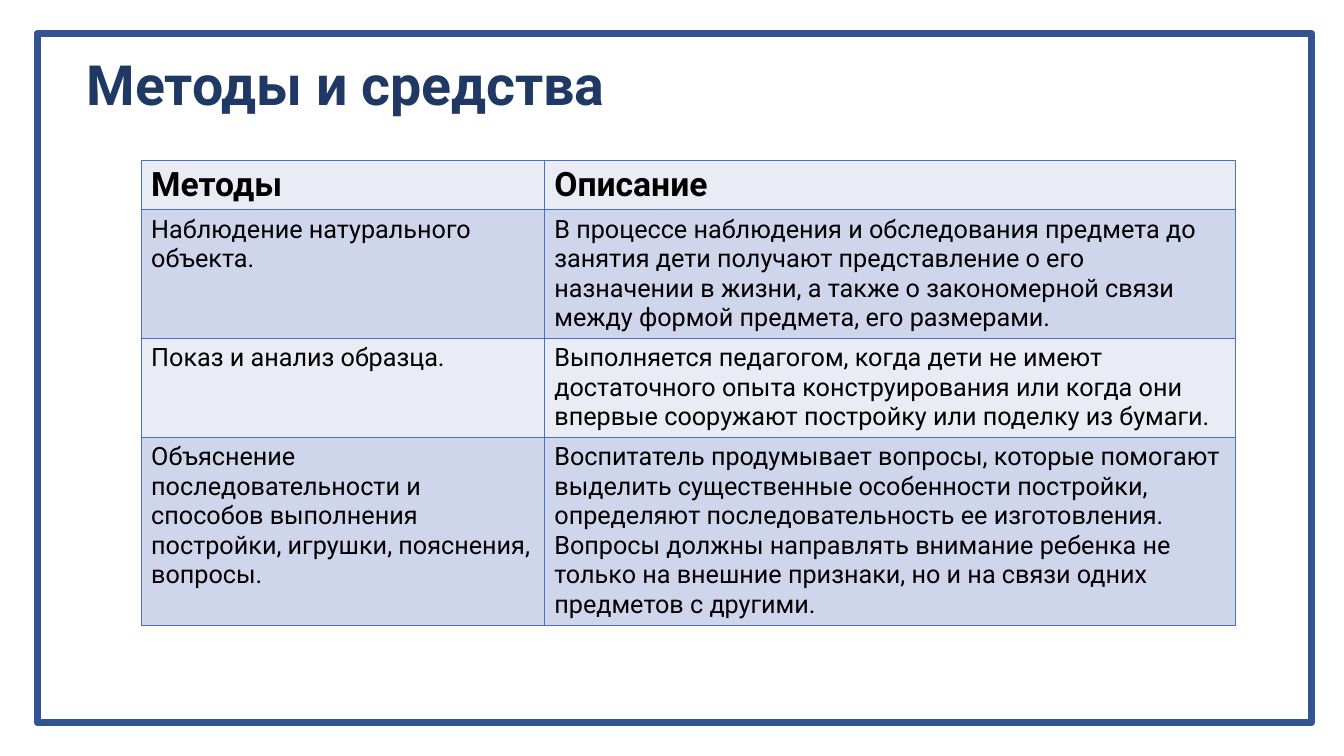
from dataclasses import dataclass

from lxml import etree
from pptx import Presentation
from pptx.dml.color import RGBColor
from pptx.enum import shapes, text
from pptx.oxml import ns
from pptx.util import Pt


@dataclass(frozen=True)
class Theme:
    font: str = "Roboto"
    title_size: float = 39.6
    header_size: float = 24
    body_size: float = 18
    paper: str = "FFFFFF"
    frame: str = "325491"
    title: str = "203864"
    ink: str = "000000"
    grid: str = "4472C4"
    bands: tuple[str, str] = ("E9EBF5", "CFD5EA")


@dataclass(frozen=True)
class Box:
    left: float
    top: float
    width: float
    height: float

    def lengths(self) -> tuple[Pt, Pt, Pt, Pt]:
        return Pt(self.left), Pt(self.top), Pt(self.width), Pt(self.height)


@dataclass(frozen=True)
class MethodRow:
    method: str
    description: str
    height: float


THEME = Theme()
FRAME_BOX = Box(26.64, 23.76, 910.08, 492.48)
TITLE_BOX = Box(54.72, 39.6, 828, 45.36)
TABLE_LEFT, TABLE_TOP = 100.8, 114.48
COLUMN_WIDTHS = (288, 493.92)

ROWS = [
    MethodRow("Методы", "Описание", 35.3),
    MethodRow(
        "Наблюдение натурального объекта.",
        "В процессе наблюдения и обследования предмета до занятия дети получают "
        "представление о его назначении в жизни, а также о закономерной связи "
        "между формой предмета, его размерами.",
        91.8,
    ),
    MethodRow(
        "Показ и анализ образца.",
        "Выполняется педагогом, когда дети не имеют достаточного опыта "
        "конструирования или когда они впервые сооружают постройку или поделку "
        "из бумаги.",
        70.4,
    ),
    MethodRow(
        "Объяснение последовательности и способов выполнения постройки, игрушки, "
        "пояснения, вопросы.",
        "Воспитатель продумывает вопросы, которые помогают выделить существенные "
        "особенности постройки, определяют последовательность ее изготовления. "
        "Вопросы должны направлять внимание ребенка не только на внешние признаки, "
        "но и на связи одних предметов с другими.",
        134.3,
    ),
]


def write(frame, words: str, size: float, color: str, bold: bool) -> None:
    para = frame.paragraphs[0]
    para.alignment = text.PP_ALIGN.LEFT
    span = para.add_run()
    span.text = words
    for name, value in {"name": THEME.font, "size": Pt(size), "bold": bold}.items():
        setattr(span.font, name, value)
    span.font.color.rgb = RGBColor.from_string(color)


def add_borders(cell, color: str, width: float) -> None:
    properties = cell._tc.get_or_add_tcPr()
    for side in ("lnL", "lnR", "lnT", "lnB"):
        line = etree.SubElement(properties, ns.qn(f"a:{side}"), w=str(Pt(width)))
        fill = etree.SubElement(line, ns.qn("a:solidFill"))
        etree.SubElement(fill, ns.qn("a:srgbClr"), val=color)


def add_title(page, words: str) -> None:
    title = page.shapes.title
    title.left, title.top, title.width, title.height = TITLE_BOX.lengths()
    settings = {
        "word_wrap": True,
        "auto_size": text.MSO_AUTO_SIZE.NONE,
        "vertical_anchor": text.MSO_ANCHOR.MIDDLE,
    }
    for name, value in settings.items():
        setattr(title.text_frame, name, value)
    write(title.text_frame, words, THEME.title_size, THEME.title, True)
    title.text_frame.paragraphs[0].line_spacing = 0.9


def add_frame(page) -> None:
    frame = page.shapes.add_shape(shapes.MSO_SHAPE.RECTANGLE, *FRAME_BOX.lengths())
    frame.shadow.inherit = False
    frame.fill.solid()
    frame.fill.fore_color.rgb = RGBColor.from_string(THEME.paper)
    frame.line.color.rgb = RGBColor.from_string(THEME.frame)
    frame.line.width = Pt(5)
    # The frame lies behind the title
    page.shapes.title.element.addprevious(frame.element)


def add_methods_table(page, rows: list[MethodRow]) -> None:
    area = Box(TABLE_LEFT, TABLE_TOP, sum(COLUMN_WIDTHS), sum(row.height for row in rows))
    table = page.shapes.add_table(len(rows), len(COLUMN_WIDTHS), *area.lengths()).table
    for column, width in zip(table.columns, COLUMN_WIDTHS):
        column.width = Pt(width)
    for index, row in enumerate(rows):
        table.rows[index].height = Pt(row.height)
        header = index == 0
        size = THEME.header_size if header else THEME.body_size
        for column, words in enumerate((row.method, row.description)):
            cell = table.cell(index, column)
            add_borders(cell, THEME.grid, 1)
            cell.fill.solid()
            cell.fill.fore_color.rgb = RGBColor.from_string(THEME.bands[index % 2])
            write(cell.text_frame, words, size, THEME.ink, header)


def main() -> None:
    deck = Presentation()
    deck.slide_width, deck.slide_height = Pt(960), Pt(540)
    page = deck.slides.add_slide(deck.slide_layouts.get_by_name("Title Only"))
    add_title(page, "Методы и средства")
    add_frame(page)
    add_methods_table(page, ROWS)
    deck.save("out.pptx")


if __name__ == "__main__":
    main()
